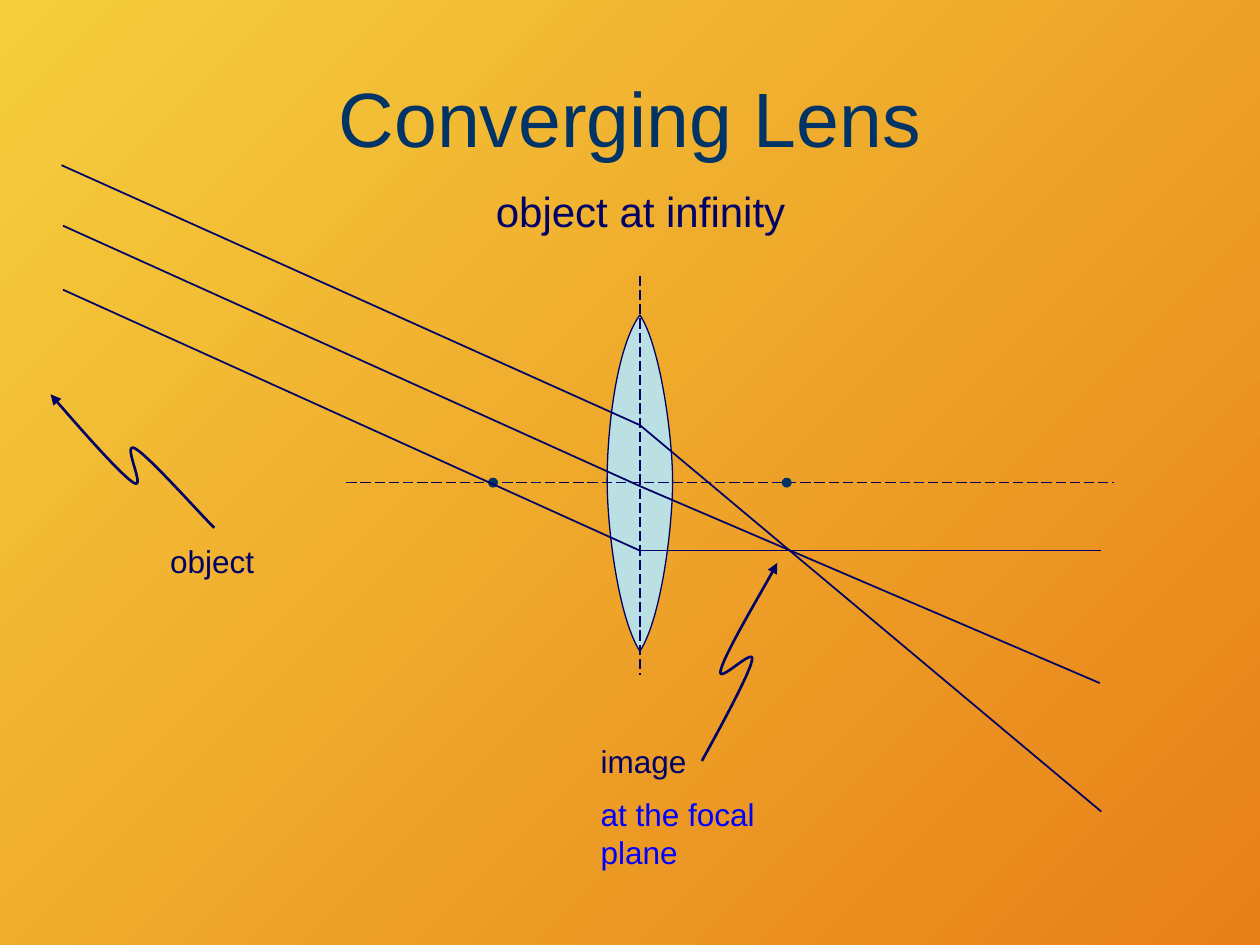
from lxml import etree
from pptx import Presentation
from pptx import util as u
from pptx.dml.color import RGBColor
from pptx.enum import dml, shapes, text
from pptx.oxml.ns import qn

NAVY = RGBColor(0x00, 0x00, 0x66)
TEAL = RGBColor(0x00, 0x33, 0x66)
BLUE = RGBColor(0x00, 0x00, 0xFF)
GLASS = RGBColor(0xBB, 0xE0, 0xE3)
YELLOW = RGBColor(0xF5, 0xCE, 0x3D)
ORANGE = RGBColor(0xE8, 0x80, 0x18)

# Content; all positions are in centimetres
CENTRE_X, AXIS_Y = 12.9, 9.73
FOCAL_LENGTH, DOT = 2.96, 0.2

AXES = [((6.98, AXIS_Y), (22.45, AXIS_Y)), ((CENTRE_X, 5.56), (CENTRE_X, 13.61))]

# Each ray: source, bend in the lens, end
RAYS = [
    [(1.24, 3.33), (CENTRE_X, 8.57), (22.2, 16.36)],
    [(1.27, 4.55), (CENTRE_X, 9.8), (22.17, 13.77)],
    [(1.27, 5.84), (CENTRE_X, 11.1), (22.2, 11.1)],
]

# Curves: start point, then two control points and an end point per segment
LENS = [
    (12.9, 6.35),
    (13.31, 6.96), (13.56, 8.81), (13.56, 9.7),
    (13.56, 10.59), (13.34, 12.45), (12.9, 13.13),
    (12.47, 12.45), (12.24, 10.67), (12.24, 9.68),
    (12.24, 8.69), (12.42, 7.01), (12.9, 6.35),
]
POINTERS = [
    [(4.32, 10.64),
     (4.06, 10.39), (3.0, 9.19), (2.72, 9.04),
     (2.44, 8.89), (2.97, 9.91), (2.69, 9.73),
     (2.41, 9.55), (1.35, 8.33), (1.02, 7.95)],
    [(14.15, 15.34),
     (14.33, 15.01), (15.11, 13.61), (15.16, 13.31),
     (15.24, 13.0), (14.43, 13.84), (14.53, 13.51),
     (14.61, 13.18), (15.44, 11.79), (15.67, 11.35)],
]

# Box, alignment, anchor, size, lines with their colours
LEFT, CENTER = text.PP_ALIGN.LEFT, text.PP_ALIGN.CENTER
TOP, MIDDLE = text.MSO_ANCHOR.TOP, text.MSO_ANCHOR.MIDDLE
LABELS = [
    ((1.27, 0.76, 22.86, 3.18), CENTER, MIDDLE, 44, [("Converging Lens", TEAL)]),
    ((8.05, 3.61, 9.73, 1.27), CENTER, TOP, 24, [("object at infinity", NAVY)]),
    ((3.18, 10.8, 2.49, 1.02), LEFT, TOP, 18, [("object", NAVY)]),
    ((11.86, 14.83, 4.06, 2.95), LEFT, TOP, 18,
     [("image", NAVY), ("at the focal plane", BLUE)]),
]


def cm(values):
    return [u.Cm(value) for value in values]


def style_line(line, width):
    line.color.rgb = NAVY
    line.width = u.Pt(width)


def add_segment(slide, start, end, width):
    segment = slide.shapes.add_connector(
        shapes.MSO_CONNECTOR.STRAIGHT, *cm(start), *cm(end))
    style_line(segment.line, width)
    etree.SubElement(segment._element.spPr, qn("a:effectLst"))
    return segment


def add_curve(slide, points, width, close=False):
    start, *rest = map(cm, points)
    builder = slide.shapes.build_freeform(*start)
    builder.add_line_segments(rest, close=close)
    curve = builder.convert_to_shape()
    # Every three straight steps become one Bezier segment
    steps = list(curve._element.iter(qn("a:lnTo")))
    for first in range(0, len(steps), 3):
        bezier = etree.Element(qn("a:cubicBezTo"))
        steps[first].addprevious(bezier)
        for step in steps[first:first + 3]:
            bezier.append(step[0])
            step.getparent().remove(step)
    curve.shadow.inherit = False
    style_line(curve.line, width)
    return curve


def add_label(slide, box, align, anchor, size, lines):
    frame = slide.shapes.add_textbox(*cm(box)).text_frame
    frame.word_wrap = True
    frame.vertical_anchor = anchor
    frame.text = "\n".join(line for line, _ in lines)
    for index, (paragraph, (_, color)) in enumerate(zip(frame.paragraphs, lines)):
        paragraph.alignment = align
        paragraph.space_before = u.Pt(size / 2 if index else 0)
        font = paragraph.runs[0].font
        font.name, font.size = "Arial", u.Pt(size)
        font.color.rgb = color


def main():
    deck = Presentation()
    deck.slide_width, deck.slide_height = u.Cm(25.4), u.Cm(19.05)
    slide = deck.slides.add_slide(deck.slide_layouts[6])

    # Background running from the top left to the bottom right
    backdrop = slide.background.fill
    backdrop.gradient()
    backdrop.gradient_angle = 315
    for stop, color in zip(backdrop.gradient_stops, (YELLOW, ORANGE)):
        stop.color.rgb = color

    # Lens
    lens = add_curve(slide, LENS, 0.75, close=True)
    lens.fill.solid()
    lens.fill.fore_color.rgb = GLASS

    # Axes and focal points
    for start, end in AXES:
        add_segment(slide, start, end, 0.75).line.dash_style = dml.MSO_LINE.LONG_DASH
    for side in (-1, 1):
        focus_x = CENTRE_X + side * FOCAL_LENGTH
        focus = slide.shapes.add_shape(
            shapes.MSO_SHAPE.OVAL,
            *cm((focus_x - DOT / 2, AXIS_Y - DOT / 2, DOT, DOT)))
        focus.shadow.inherit = False
        focus.fill.solid()
        focus.fill.fore_color.rgb = TEAL
        focus.line.fill.background()

    # Rays
    for source, bend, end in RAYS:
        add_segment(slide, source, bend, 1)
        add_segment(slide, bend, end, 1)

    # Wavy pointers with arrowheads
    for points in POINTERS:
        pointer = add_curve(slide, points, 1.5)
        pointer.fill.background()
        etree.SubElement(pointer.line._get_or_add_ln(), qn("a:tailEnd"), type="triangle")

    # Title and labels
    for label in LABELS:
        add_label(slide, *label)

    deck.save("out.pptx")


if __name__ == "__main__":
    main()
